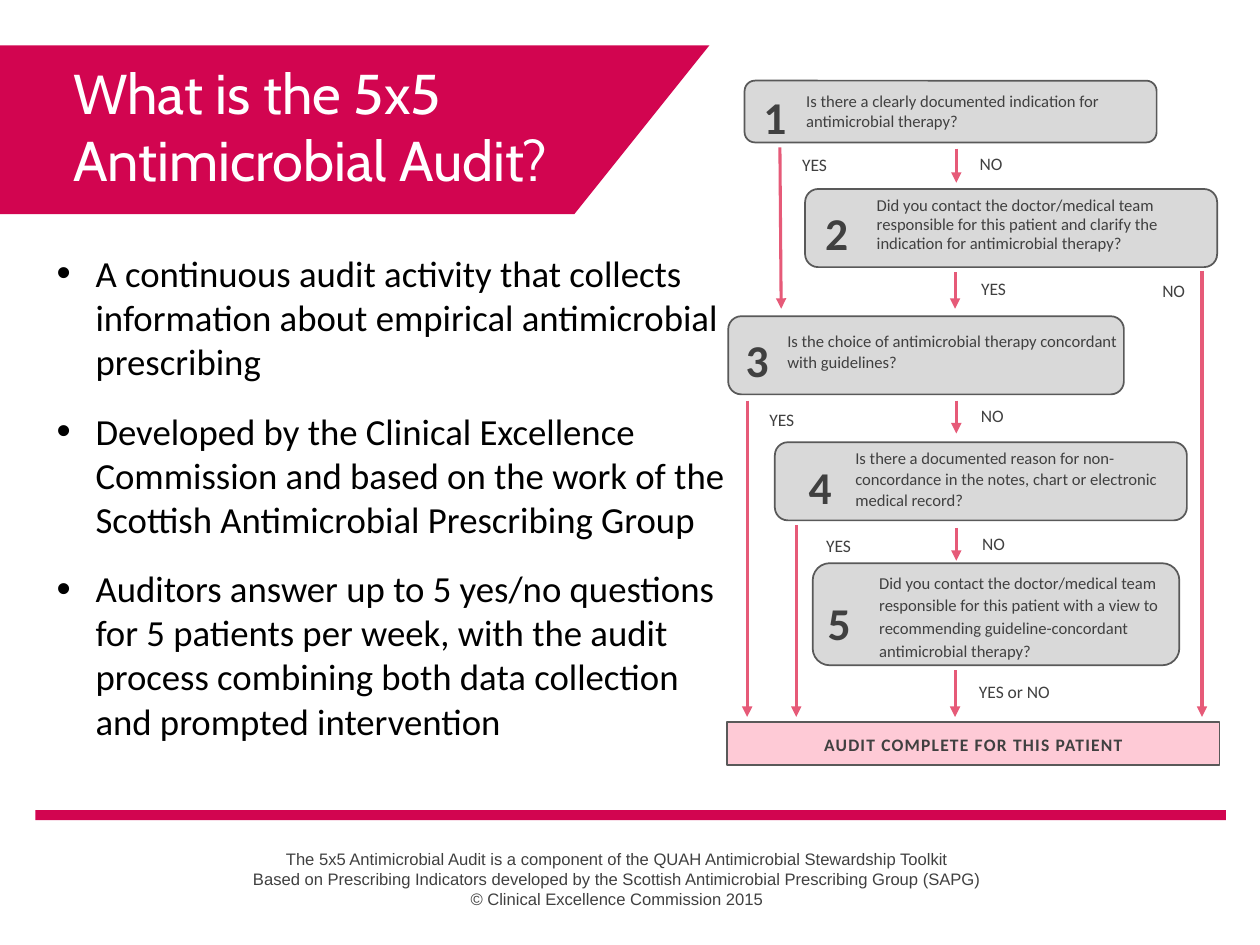
from dataclasses import dataclass
from typing import Optional, Union

from lxml.etree import SubElement
from pptx import Presentation
from pptx.dml.color import RGBColor
from pptx.enum.shapes import MSO_CONNECTOR, MSO_SHAPE
from pptx.enum.text import MSO_ANCHOR, MSO_AUTO_SIZE, PP_ALIGN
from pptx.oxml.ns import qn
from pptx.util import Inches, Pt

COLORS = {
    "brand": "D20550",
    "arrow": "E65A78",
    "step": "D9D9D9",
    "result": "FECAD6",
    "outline": "595959",
    "text": "404040",
    "body": "000000",
    "white": "FFFFFF",
}

Box = tuple[float, float, float, float]


@dataclass
class Step:
    number: str
    question: str
    frame: Box
    number_box: Box
    question_box: Box
    spacing: Union[float, Pt] = Pt(12)


@dataclass
class Flow:
    answer: str
    start: tuple[float, float]
    end: tuple[float, float]
    label_box: Box


STEPS = [
    Step("1", "Is there a clearly documented indication for antimicrobial therapy?",
         (5.91, 0.64, 3.27, 0.49), (5.96, 0.59, 0.5, 0.49), (6.3, 0.66, 2.9, 0.45)),
    Step("2", "Did you contact the doctor/medical team responsible for this patient "
         "and clarify the indication for antimicrobial therapy?",
         (6.39, 1.5, 3.27, 0.62), (6.45, 1.51, 0.56, 0.57), (6.86, 1.5, 2.85, 0.65), Pt(11)),
    Step("3", "Is the choice of antimicrobial therapy concordant with guidelines?",
         (5.78, 2.51, 3.14, 0.62), (5.82, 2.52, 0.54, 0.58), (6.15, 2.57, 2.9, 0.48)),
    Step("4", "Is there a documented reason for non-concordance in the notes, "
         "chart or electronic medical record?",
         (6.15, 3.51, 3.27, 0.62), (6.32, 3.53, 0.4, 0.58), (6.69, 3.5, 2.73, 0.6)),
    Step("5", "Did you contact the doctor/medical team responsible for this patient "
         "with a view to recommending guideline-concordant antimicrobial therapy?",
         (6.45, 4.47, 2.91, 0.81), (6.47, 4.61, 0.53, 0.51), (6.88, 4.47, 2.54, 0.81), 1.15),
]

FLOWS = [
    Flow("YES", (6.19, 1.17), (6.2, 2.45), (6.2, 1.15, 0.53, 0.3)),
    Flow("YES", (5.93, 3.18), (5.93, 5.69), (5.94, 3.17, 0.53, 0.3)),
    Flow("YES", (6.32, 4.17), (6.32, 5.69), (6.39, 4.17, 0.53, 0.3)),
    Flow("NO", (7.59, 1.18), (7.59, 1.45), (7.6, 1.14, 0.53, 0.3)),
    Flow("YES", (7.58, 2.16), (7.58, 2.45), (7.62, 2.13, 0.53, 0.3)),
    Flow("NO", (7.59, 3.18), (7.59, 3.44), (7.61, 3.14, 0.53, 0.3)),
    Flow("NO", (7.59, 4.19), (7.59, 4.45), (7.62, 4.16, 0.53, 0.3)),
    Flow("YES or NO", (7.58, 5.32), (7.58, 5.69), (7.49, 5.33, 1.12, 0.26)),
    Flow("NO", (9.54, 2.15), (9.54, 5.69), (9.05, 2.15, 0.53, 0.3)),
]

BULLETS = [
    "A continuous audit activity that collects information about empirical "
    "antimicrobial prescribing",
    "Developed by the Clinical Excellence Commission and based on the work of "
    "the Scottish Antimicrobial Prescribing Group",
    "Auditors answer up to 5 yes/no questions for 5 patients per week, with the "
    "audit process combining both data collection and prompted intervention",
]

FOOTER = [
    "The 5x5 Antimicrobial Audit is a component of the QUAH Antimicrobial Stewardship Toolkit",
    "Based on Prescribing Indicators developed by the Scottish Antimicrobial "
    "Prescribing Group (SAPG)",
    "© Clinical Excellence Commission 2015",
]


def write_text(frame, text: Union[str, list[str]], *, size: float, font: str = "Calibri",
               color: str = "text", bold: bool = False, align=PP_ALIGN.LEFT,
               anchor=MSO_ANCHOR.TOP, line_spacing=None, gap: float = 0,
               bullet: bool = False, tracking: float = 0) -> None:
    frame.word_wrap = True
    frame.auto_size = MSO_AUTO_SIZE.NONE
    frame.vertical_anchor = anchor
    lines = [text] if isinstance(text, str) else text
    for index, line in enumerate(lines):
        paragraph = frame.add_paragraph() if index else frame.paragraphs[0]
        paragraph.alignment = align
        paragraph.line_spacing = line_spacing
        if index:
            paragraph.space_before = Pt(gap)
        if bullet:
            add_bullet(paragraph)
        run = paragraph.add_run()
        run.text = line
        run.font.name = font
        run.font.size = Pt(size)
        run.font.bold = bold
        run.font.color.rgb = RGBColor.from_string(COLORS[color])
        if tracking:
            run.font._element.set("spc", str(round(tracking * 100)))


def add_bullet(paragraph) -> None:
    properties = paragraph._p.get_or_add_pPr()
    properties.set("marL", str(Inches(0.31)))
    properties.set("indent", str(-Inches(0.31)))
    SubElement(properties, qn("a:buSzPct"), val="110000")
    SubElement(properties, qn("a:buFont"), typeface="Arial")
    SubElement(properties, qn("a:buChar"), char="•")


def add_text(slide, box: Box, text: Union[str, list[str]], **text_format) -> None:
    shape = slide.shapes.add_textbox(*map(Inches, box))
    write_text(shape.text_frame, text, **text_format)


def add_block(slide, kind, box: Box, fill: str, outline: Optional[str] = None):
    shape = slide.shapes.add_shape(kind, *map(Inches, box))
    shape.shadow.inherit = False
    shape.fill.solid()
    shape.fill.fore_color.rgb = RGBColor.from_string(COLORS[fill])
    if outline:
        shape.line.color.rgb = RGBColor.from_string(COLORS[outline])
        shape.line.width = Pt(1)
    else:
        shape.line.fill.background()
    return shape


def add_step(slide, step: Step) -> None:
    add_block(slide, MSO_SHAPE.ROUNDED_RECTANGLE, step.frame, "step", "outline")
    add_text(slide, step.number_box, step.number, size=26, bold=True, line_spacing=1.15)
    add_text(slide, step.question_box, step.question, size=9.5, line_spacing=step.spacing)


def add_flow(slide, flow: Flow) -> None:
    connector = slide.shapes.add_connector(
        MSO_CONNECTOR.STRAIGHT, *map(Inches, flow.start + flow.end))
    connector.line.color.rgb = RGBColor.from_string(COLORS["arrow"])
    connector.line.width = Pt(1.75)
    SubElement(connector.line._get_or_add_ln(), qn("a:tailEnd"), type="triangle")
    SubElement(connector._element.spPr, qn("a:effectLst"))
    add_text(slide, flow.label_box, flow.answer, size=10, align=PP_ALIGN.CENTER,
             line_spacing=1.15)


def add_title(slide) -> None:
    banner = add_block(slide, MSO_SHAPE.PARALLELOGRAM, (-1.46, 0.36, 7.09, 1.34), "brand")
    banner.adjustments[0] = 0.8
    title = slide.shapes.title
    title.left, title.top, title.width, title.height = map(Inches, (0.48, 0.6, 5.3, 0.79))
    write_text(title.text_frame, "What is the 5x5 Antimicrobial Audit?", size=32,
               font="Cabin", color="white", anchor=MSO_ANCHOR.MIDDLE)
    banner._element.addnext(title._element)


def main() -> None:
    presentation = Presentation()
    presentation.slide_width, presentation.slide_height = Inches(10), Inches(7.5)
    slide = presentation.slides.add_slide(presentation.slide_layouts[5])

    add_block(slide, MSO_SHAPE.RECTANGLE, (0.28, 6.43, 9.45, 0.08), "brand")
    add_text(slide, (1.77, 6.69, 6.25, 0.69), FOOTER, size=9.5, font="Arial",
             align=PP_ALIGN.CENTER)
    add_title(slide)
    add_text(slide, (0.35, 1.94, 5.52, 4.17), BULLETS, size=21, color="body",
             gap=14.5, bullet=True)
    for step in STEPS:
        add_step(slide, step)
    result = add_block(slide, MSO_SHAPE.RECTANGLE, (5.77, 5.73, 3.91, 0.34),
                       "result", "outline")
    write_text(result.text_frame, "AUDIT COMPLETE FOR THIS PATIENT", size=10, bold=True,
               align=PP_ALIGN.CENTER, anchor=MSO_ANCHOR.MIDDLE, line_spacing=1.15,
               tracking=0.7)
    for flow in FLOWS:
        add_flow(slide, flow)
    presentation.save("out.pptx")


if __name__ == "__main__":
    main()
